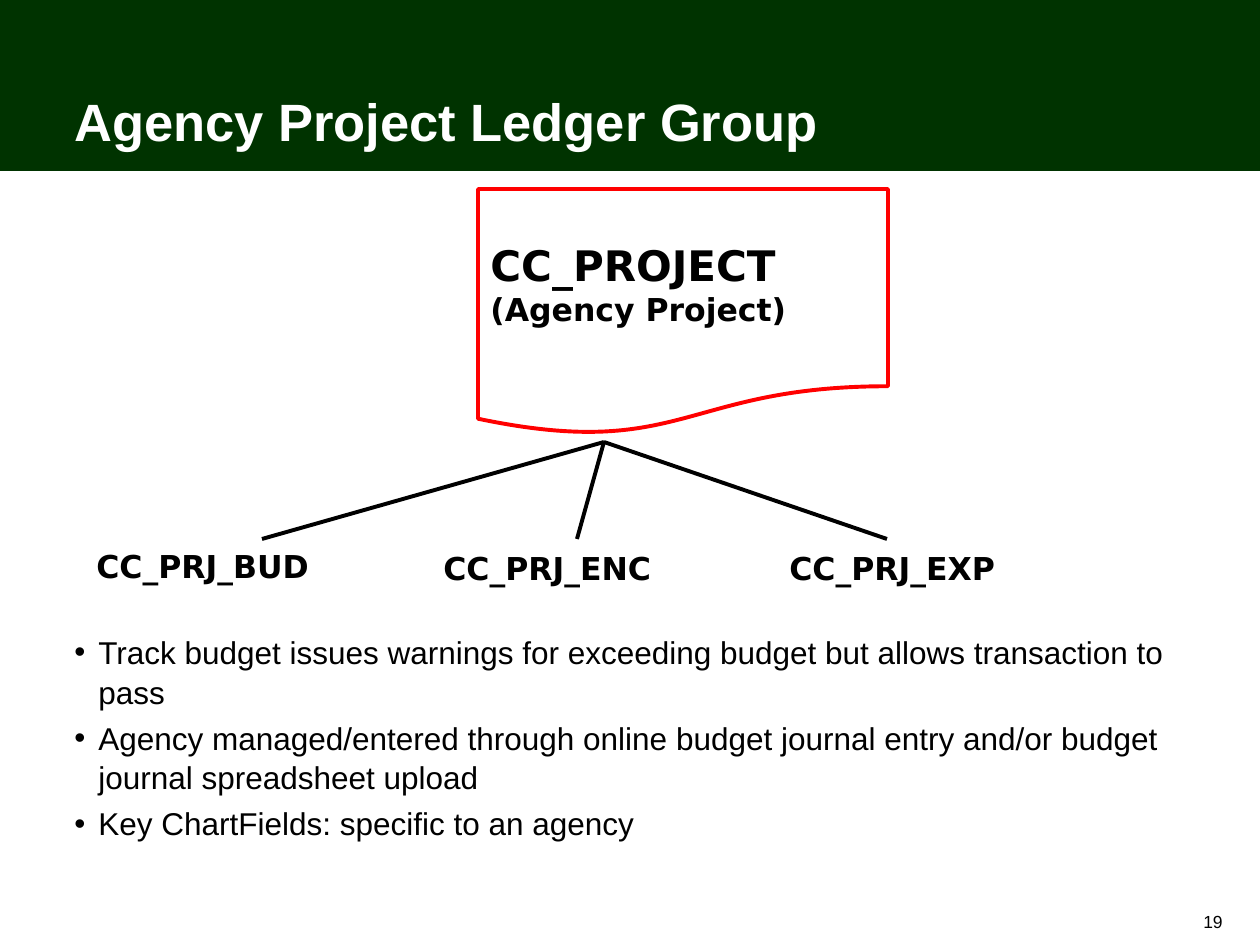
from lxml.etree import SubElement
from pptx import Presentation
from pptx.dml.color import RGBColor
from pptx.enum.shapes import MSO_CONNECTOR, MSO_SHAPE
from pptx.enum.text import MSO_ANCHOR as Anchor, PP_ALIGN as Align
from pptx.oxml.ns import qn
from pptx.util import Inches, Pt

PX = Inches(1) / 126
COLORS = {"band": "003300", "outline": "FF0000", "text": "000000", "title": "FFFFFF"}
HEADING = {"name": "Arial", "size": Pt(30), "bold": True}
BODY = {"name": "Arial", "size": Pt(18)}
FOOTER = {"name": "Arial", "size": Pt(10)}
GROUP = {"name": "DejaVu Sans", "size": Pt(24), "bold": True}
LEDGER = {**GROUP, "size": Pt(18)}


def px(*lengths):
    return [round(length * PX) for length in lengths]


def rgb(name):
    return RGBColor.from_string(COLORS[name])


def apply(target, values):
    for key, value in values.items():
        setattr(target, key, value)


class SlideBuilder:
    def __init__(self, slide):
        self.slide = slide
        self.line_width = Pt(2.25)

    def shape(self, kind, box, fill=None, line=None):
        shape = self.slide.shapes.add_shape(kind, *px(*box))
        shape.shadow.inherit = False
        if fill:
            shape.fill.solid()
            shape.fill.fore_color.rgb = rgb(fill)
        else:
            shape.fill.background()
        if line:
            shape.line.color.rgb = rgb(line)
            shape.line.width = self.line_width
        else:
            shape.line.fill.background()

    def text(self, box, lines, color="text", anchor=Anchor.TOP, bullet_indent=0, **layout):
        """Write one paragraph for each (wording, font) pair in lines."""
        frame = self.slide.shapes.add_textbox(*px(*box)).text_frame
        apply(frame, {"word_wrap": True, "vertical_anchor": anchor})
        for index, (wording, font) in enumerate(lines):
            paragraph = frame.add_paragraph() if index else frame.paragraphs[0]
            paragraph.text = wording
            if bullet_indent:
                self.bullet(paragraph, bullet_indent)
                if index:
                    paragraph.space_before = Pt(3.6)
            apply(paragraph, layout)
            apply(paragraph.font, font)
            paragraph.font.color.rgb = rgb(color)

    def bullet(self, paragraph, indent):
        properties = paragraph._p.get_or_add_pPr()
        [margin] = px(indent)
        properties.set("marL", str(margin))
        properties.set("indent", str(-margin))
        SubElement(properties, qn("a:buFont"), typeface="Arial")
        SubElement(properties, qn("a:buChar"), char="•")

    def line(self, start, end):
        line = self.slide.shapes.add_connector(MSO_CONNECTOR.STRAIGHT, *px(*start, *end))
        line.line.color.rgb = rgb("text")
        line.line.width = self.line_width
        SubElement(line._element.spPr, qn("a:effectLst"))


def main():
    deck = Presentation()
    deck.slide_width, deck.slide_height = px(1260, 945)
    page = SlideBuilder(deck.slides.add_slide(deck.slide_layouts[6]))

    # Title band and page number
    page.shape(MSO_SHAPE.RECTANGLE, (0, 0, 1260, 171), fill="band")
    page.text((62, 0, 866, 158), [("Agency Project Ledger Group", HEADING)],
              color="title", anchor=Anchor.BOTTOM)
    page.text((1002, 900, 233, 38), [("19", FOOTER)], anchor=Anchor.BOTTOM,
              alignment=Align.RIGHT, line_spacing=0.8)

    # Ledger group
    page.shape(MSO_SHAPE.FLOWCHART_DOCUMENT, (478, 189, 410, 246), line="outline")
    page.text((478, 233, 410, 122), [("CC_PROJECT", GROUP), ("(Agency Project)", LEDGER)])

    # Ledgers and the branches that lead to them
    ledgers = [("CC_PRJ_BUD", 84, 541, 262), ("CC_PRJ_ENC", 431, 543, 577),
               ("CC_PRJ_EXP", 777, 543, 887)]
    for ledger, left, top, branch_end in ledgers:
        page.text((left, top, 347, 50), [(ledger, LEDGER)])
        page.line((604, 442), (branch_end, 539))

    # Notes on the ledger group
    points = [
        "Track budget issues warnings for exceeding budget but allows transaction to pass",
        "Agency managed/entered through online budget journal entry and/or budget "
        "journal spreadsheet upload",
        "Key ChartFields: specific to an agency",
    ]
    page.text((62, 625, 1150, 246), [(point, BODY) for point in points],
              bullet_indent=24, line_spacing=1.05)

    deck.save("out.pptx")


if __name__ == "__main__":
    main()
